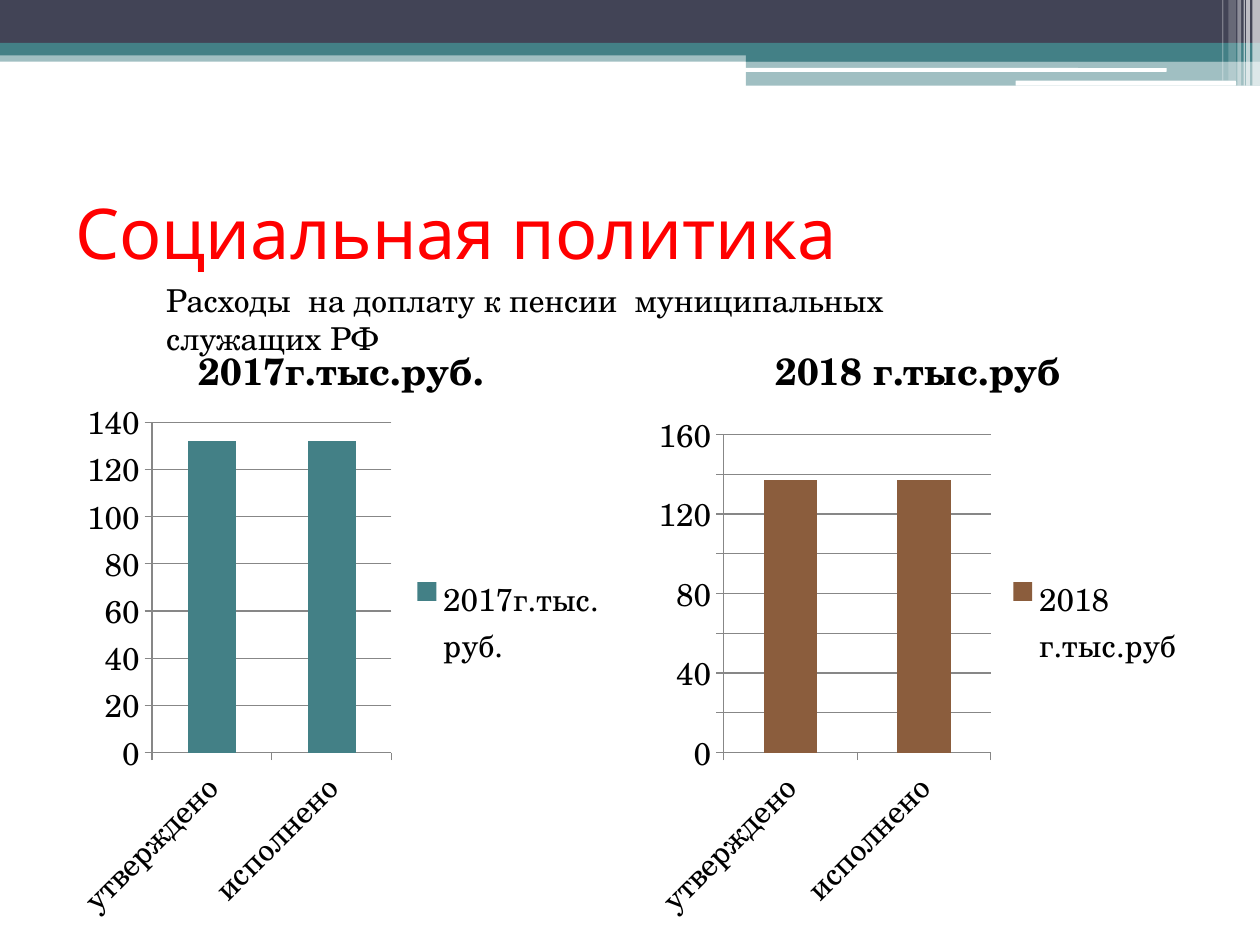
import pptx
import pptx.chart.data
import pptx.dml.color
import pptx.enum.chart
import pptx.enum.shapes
import pptx.enum.text
import pptx.oxml.ns
import pptx.oxml.xmlchemy
import pptx.util

COLUMNS, ROWS = 1000, 750
WIDTH, HEIGHT = pptx.util.Inches(10), pptx.util.Inches(7.5)
SERIF = "TeX Gyre Schola"
TEAL, NAVY, BROWN, WHITE = "438086", "424456", "8B5D3D", "FFFFFF"
BLACK, RED, GRAY = "000000", "FF0000", "878787"


def color(value):
    return pptx.dml.color.RGBColor.from_string(value)


def place(box, left, top, width, height):
    return (box[0] + left, box[1] + top, width, height)


def lengths(box):
    left, top, width, height = box
    return (int(WIDTH * left / COLUMNS), int(HEIGHT * top / ROWS),
            int(WIDTH * width / COLUMNS), int(HEIGHT * height / ROWS))


def style_font(font, size, name, value, bold=False):
    font.size = pptx.util.Pt(size)
    font.name = name
    font.bold = bold
    font.color.rgb = color(value)


def add_element(parent, tag, value=None):
    element = pptx.oxml.xmlchemy.OxmlElement(tag)
    if value is not None:
        element.set("val", str(value))
    parent.append(element)
    return element


def add_band(page, box, fill, opacity=100, rounded=False):
    kinds = pptx.enum.shapes.MSO_SHAPE
    kind = kinds.ROUNDED_RECTANGLE if rounded else kinds.RECTANGLE
    band = page.shapes.add_shape(kind, *lengths(box))
    band.shadow.inherit = False
    band.line.fill.background()
    band.fill.solid()
    band.fill.fore_color.rgb = color(fill)
    if opacity < 100:
        fill_tag = pptx.oxml.ns.qn("a:solidFill")
        tone = band._element.spPr.find(fill_tag)[0]
        add_element(tone, "a:alpha", opacity * 1000)


def add_header(page, box):
    width, height = box[2:]
    step = 592
    add_band(page, place(box, 0, 40, width, 9), TEAL, 50)
    add_band(page, place(box, 0, 0, width, 34), NAVY)
    add_band(page, place(box, 0, 34, width, 10), TEAL)
    add_band(page, place(box, step, 39, width - step, 10), TEAL)
    add_band(page, place(box, step, 48, width - step, 20), TEAL, 50)
    add_band(page, place(box, step - 1, 54, 335, 3), WHITE, rounded=True)
    add_band(page, place(box, 806, 64, 175, 4), WHITE, rounded=True)
    stripes = [(994, 6, height, 65), (989, 3, height, 65), (987, 1, height, 60),
               (982, 3, height, 40), (975, 6, 64, 20), (970, 1, 64, 30)]
    for left, thickness, drop, opacity in stripes:
        add_band(page, place(box, left, 0, thickness, drop), WHITE, opacity)


def add_title(page, box):
    title = page.shapes.title
    title.left, title.top, title.width, title.height = lengths(box)
    frame = title.text_frame
    frame.text = "Социальная политика"
    frame.vertical_anchor = pptx.enum.text.MSO_ANCHOR.MIDDLE
    para = frame.paragraphs[0]
    para.alignment = pptx.enum.text.PP_ALIGN.LEFT
    style_font(para.runs[0].font, 40, "Karla", RED)


def add_subtitle(page, box):
    frame = page.shapes.add_textbox(*lengths(box)).text_frame
    frame.word_wrap = True
    frame.text = "Расходы  на доплату к пенсии  муниципальных служащих РФ"
    style_font(frame.paragraphs[0].runs[0].font, 18, SERIF, BLACK)


def set_plot_area(chart, shares):
    area = chart._chartSpace.chart.plotArea
    for old in area.findall(pptx.oxml.ns.qn("c:layout")):
        area.remove(old)
    layout = pptx.oxml.xmlchemy.OxmlElement("c:layout")
    area.insert(0, layout)
    manual = add_element(layout, "c:manualLayout")
    settings = [("layoutTarget", "inner"), ("xMode", "edge"), ("yMode", "edge")]
    settings += zip("xywh", shares)
    for name, value in settings:
        add_element(manual, "c:" + name, value)


def add_budget_chart(page, box, name, amount, fill, maximum, plot_area):
    data = pptx.chart.data.CategoryChartData()
    data.categories = ["утверждено", "исполнено"]
    data.add_series(name, [amount, amount])
    kind = pptx.enum.chart.XL_CHART_TYPE.COLUMN_STACKED
    chart = page.shapes.add_chart(kind, *lengths(box), data).chart
    style_font(chart.font, 18, SERIF, BLACK)

    chart.has_title = True
    chart.chart_title.text_frame.text = name
    run = chart.chart_title.text_frame.paragraphs[0].runs[0]
    style_font(run.font, 21.6, SERIF, BLACK, bold=True)
    chart.has_legend = True
    chart.legend.position = pptx.enum.chart.XL_LEGEND_POSITION.RIGHT
    chart.legend.include_in_layout = False

    plot = chart.plots[0]
    plot.vary_by_categories = False
    plot.gap_width, plot.overlap = 150, 100
    plot.series[0].format.fill.solid()
    plot.series[0].format.fill.fore_color.rgb = color(fill)

    values, categories = chart.value_axis, chart.category_axis
    values.minimum_scale, values.maximum_scale = 0, maximum
    values.major_unit = 20
    values.has_major_gridlines = True
    for axis in (values, categories):
        axis.major_tick_mark = pptx.enum.chart.XL_TICK_MARK.OUTSIDE
        style_font(axis.tick_labels.font, 18, SERIF, BLACK)
    for part in (values, categories, values.major_gridlines):
        part.format.line.color.rgb = color(GRAY)
        part.format.line.width = pptx.util.Pt(0.75)
    body = categories._element.find(".//" + pptx.oxml.ns.qn("a:bodyPr"))
    body.set("rot", str(-45 * 60000))
    set_plot_area(chart, plot_area)


def add_charts(page, box):
    gap = 16
    width = (box[2] - gap) / 2
    charts = [("2017г.тыс.руб.", 132, TEAL, 140, (0.16, 0.18, 0.43, 0.53)),
              ("2018 г.тыс.руб", 137, BROWN, 160, (0.15, 0.2, 0.48, 0.51))]
    for index, details in enumerate(charts):
        cell = place(box, index * (width + gap), 0, width, box[3])
        add_budget_chart(page, cell, *details)


def main():
    deck = pptx.Presentation()
    deck.slide_width, deck.slide_height = WIDTH, HEIGHT
    page = deck.slides.add_slide(deck.slide_layouts[5])
    add_header(page, (0, 0, COLUMNS, 68))
    add_title(page, (50, 125, 900, 117))
    add_charts(page, (50, 246, 900, 495))
    add_subtitle(page, (122, 218, 685, 40))
    deck.save("out.pptx")


if __name__ == "__main__":
    main()
